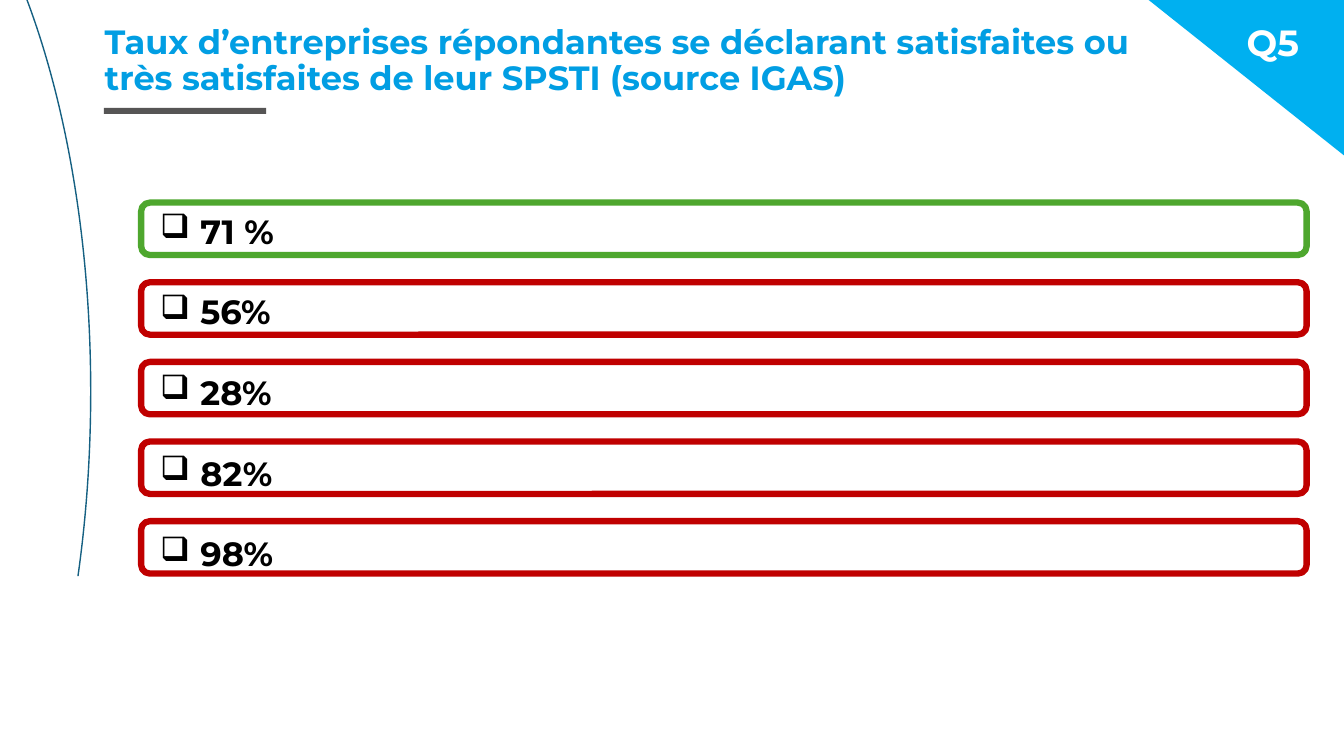
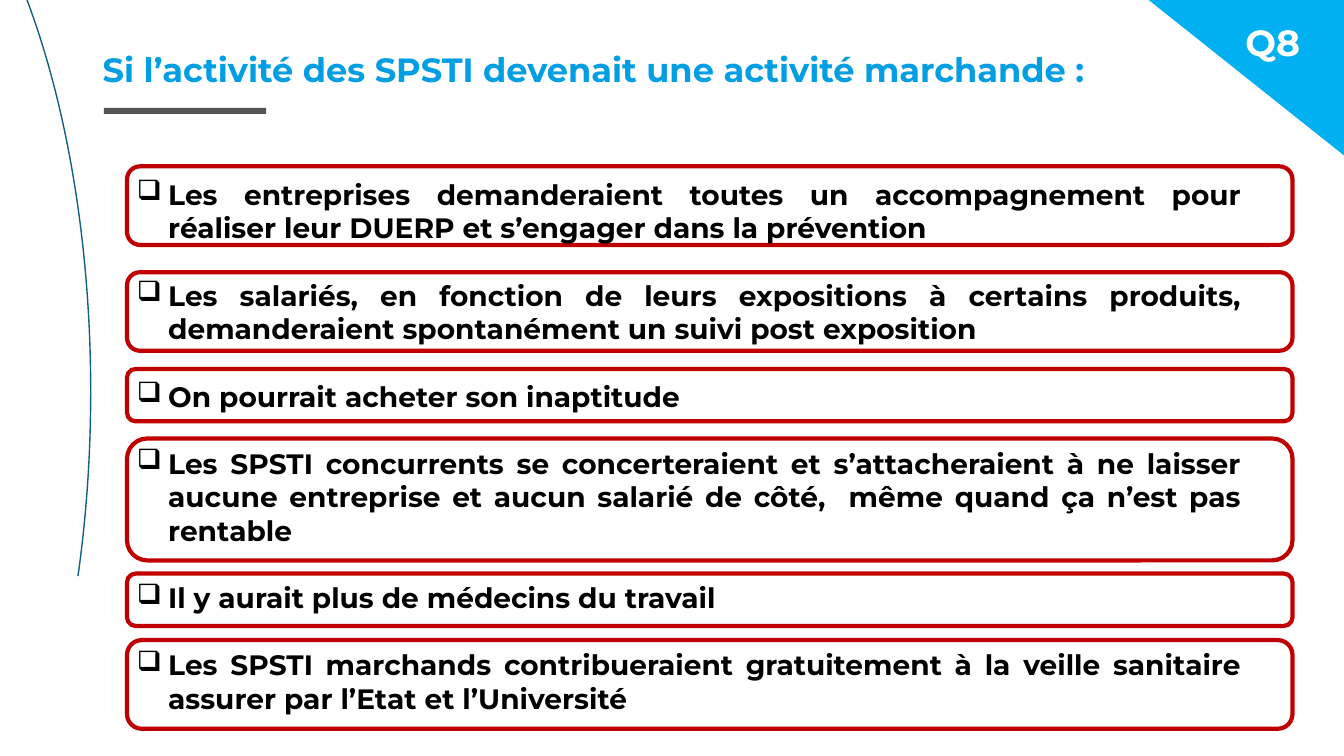
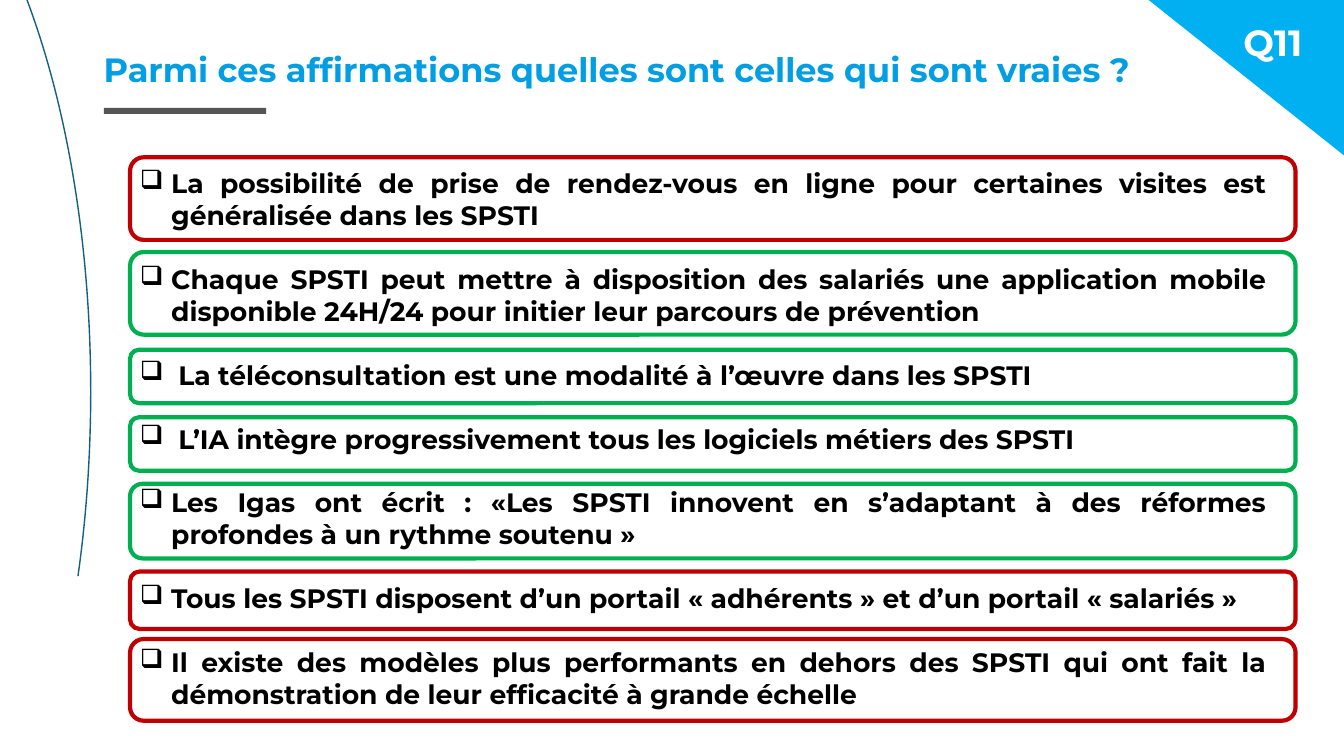
from lxml.etree import SubElement
from pptx import Presentation
from pptx.dml.color import RGBColor
from pptx.enum.shapes import MSO_SHAPE as SHAPE
from pptx.enum.text import PP_ALIGN as ALIGN
from pptx.oxml.ns import qn
from pptx.util import Inches, Pt

COLORS = {
    "title": "019EE3",
    "corner": "00B0F0",
    "bar": "565555",
    "arc": "156082",
    "wrong": "C00000",
    "right": "00B050",
    "right_soft": "4EA72E",
    "white": "FFFFFF",
    "black": "000000",
}
FONT = "Montserrat"
LINE_HEIGHT = 1.2
INDENT = 0.31


def rgb(name):
    return RGBColor.from_string(COLORS[name])


def write(p, text, size=24, color="black", align=ALIGN.LEFT, spacing=None, before=0, bullet=None, indent=0):
    p.alignment = align
    if spacing:
        p.line_spacing = spacing
    if before:
        p.space_before = Pt(before)
    if bullet:
        pPr = p._p.get_or_add_pPr()
        pPr.set("marL", str(Inches(indent)))
        pPr.set("indent", str(-Inches(indent)))
        SubElement(pPr, qn("a:buChar")).set("char", bullet)
    r = p.add_run()
    r.text = text
    r.font.name = FONT
    r.font.size = Pt(size)
    r.font.bold = True
    r.font.color.rgb = rgb(color)


class Deck:
    def __init__(self):
        self.prs = Presentation()
        self.prs.slide_width = Inches(13.33)
        self.prs.slide_height = Inches(7.5)
        self.s = None

    def shape(self, kind, left, top, width, height, fill=None, line=None, weight=1):
        sp = self.s.shapes.add_shape(kind, Inches(left), Inches(top), Inches(width), Inches(height))
        sp.shadow.inherit = False
        if fill:
            sp.fill.solid()
            sp.fill.fore_color.rgb = rgb(fill)
        else:
            sp.fill.background()
        if line:
            sp.line.color.rgb = rgb(line)
            sp.line.width = Pt(weight)
        else:
            sp.line.fill.background()
        return sp

    def text_frame(self, left, top, width, height):
        sp = self.s.shapes.add_textbox(Inches(left), Inches(top), Inches(width), Inches(height))
        tf = sp.text_frame
        tf.word_wrap = True
        return tf

    def new_slide(self):
        self.s = self.prs.slides.add_slide(self.prs.slide_layouts[6])
        arc = self.shape(SHAPE.ARC, -4.42, -2.12, 5.32, 12.01, line="arc")
        for i, degrees in enumerate((178.34, 35.86)):
            arc.adjustments[i] = degrees * 0.6
        self.shape(SHAPE.RECTANGLE, 1.03, 1.07, 1.61, 0.06, fill="bar")

    def title(self, text, left, top, width, height):
        tf = self.text_frame(left, top, width, height)
        write(tf.paragraphs[0], text, color="title", spacing=0.9)

    def frames(self, left, rows, weight=3):
        for top, height, color in rows:
            self.shape(SHAPE.ROUNDED_RECTANGLE, left, top, 11.56, height, "white", color, weight)

    def answers(self, items, left, top, width, height, size, align=ALIGN.JUSTIFY):
        tf = self.text_frame(left, top, width, height)
        for i, (text, indent) in enumerate(items):
            p = tf.add_paragraph() if i else tf.paragraphs[0]
            write(p, text, size=size, align=align, before=size * LINE_HEIGHT if i else 0,
                  bullet="❑", indent=indent)

    def corner(self, label):
        self.shape(SHAPE.RIGHT_TRIANGLE, 11.38, -0.01, 1.96, 1.56, fill="corner").rotation = 180
        tf = self.text_frame(11.66, 0.2, 1.93, 0.57)
        write(tf.paragraphs[0], label, size=26, color="white", align=ALIGN.CENTER, spacing=0.9)


def satisfaction_slide(deck):
    deck.new_slide()
    colors = ["right_soft"] + ["wrong"] * 4
    deck.frames(1.4, [(2.01 + 0.79 * i, 0.52, c) for i, c in enumerate(colors)], weight=4.5)
    deck.title("Taux d’entreprises répondantes se déclarant satisfaites ou très satisfaites "
               "de leur SPSTI (source IGAS)", 0.94, 0.2, 10.72, 0.85)
    rates = ["71 %", "56%", "28%", "82%", "98%"]
    deck.answers([(rate, 0.4) for rate in rates], 1.49, 2.04, 7.7, 4.04, 24, ALIGN.LEFT)
    deck.corner("Q5")


def market_slide(deck):
    deck.new_slide()
    rows = [(1.65, 0.78), (2.7, 0.78), (3.66, 0.52), (4.35, 1.21), (5.69, 0.52), (6.35, 0.88)]
    deck.frames(1.26, [(top, height, "wrong") for top, height in rows])
    deck.title("Si l’activité des SPSTI devenait une activité marchande :", 0.92, 0.48, 11.15, 0.97)
    claims = [
        "Les entreprises demanderaient toutes un accompagnement pour réaliser leur DUERP "
        "et s’engager dans la prévention",
        "Les salariés, en fonction de leurs expositions à certains produits, "
        "demanderaient spontanément un suivi post exposition",
        "On pourrait acheter son inaptitude",
        "Les SPSTI concurrents se concerteraient et s’attacheraient à ne laisser aucune "
        "entreprise et aucun salarié de côté,  même quand ça n’est pas rentable",
        "Il y aurait plus de médecins du travail",
        "Les SPSTI marchands contribueraient gratuitement à la veille sanitaire "
        "assurer par l’Etat et l’Université",
    ]
    deck.answers([(claim, INDENT) for claim in claims], 1.26, 1.71, 11.15, 5.79, 20)
    deck.corner("Q8")


def statements_slide(deck):
    deck.new_slide()
    deck.frames(1.29, [
        (1.56, 0.82, "wrong"), (2.5, 0.82, "right"), (3.47, 0.53, "right"), (4.14, 0.53, "right"),
        (4.8, 0.74, "right"), (5.67, 0.57, "wrong"), (6.34, 0.81, "wrong"),
    ])
    deck.title("Parmi ces affirmations quelles sont celles qui sont vraies ?", 0.93, 0.48, 10.94, 0.97)
    deck.answers([
        ("La possibilité de prise de rendez-vous en ligne pour certaines visites est "
         "généralisée dans les SPSTI", INDENT),
        ("Chaque SPSTI peut mettre à disposition des salariés une application mobile "
         "disponible 24H/24 pour initier leur parcours de prévention", INDENT),
        ("La téléconsultation est une modalité à l’œuvre dans les SPSTI", 0.38),
        ("L’IA intègre progressivement tous les logiciels métiers des SPSTI", 0.38),
        ("Les Igas ont écrit : «Les SPSTI innovent en s’adaptant à des réformes profondes "
         "à un rythme soutenu »", INDENT),
        ("Tous les SPSTI disposent d’un portail « adhérents » et d’un portail « salariés »", INDENT),
        ("Il existe des modèles plus performants en dehors des SPSTI qui ont fait la "
         "démonstration de leur efficacité à grande échelle", INDENT),
    ], 1.29, 1.61, 11.37, 5.54, 19)
    deck.corner("Q11")


def main():
    deck = Deck()
    satisfaction_slide(deck)
    market_slide(deck)
    statements_slide(deck)
    deck.prs.save("out.pptx")


if __name__ == "__main__":
    main()
